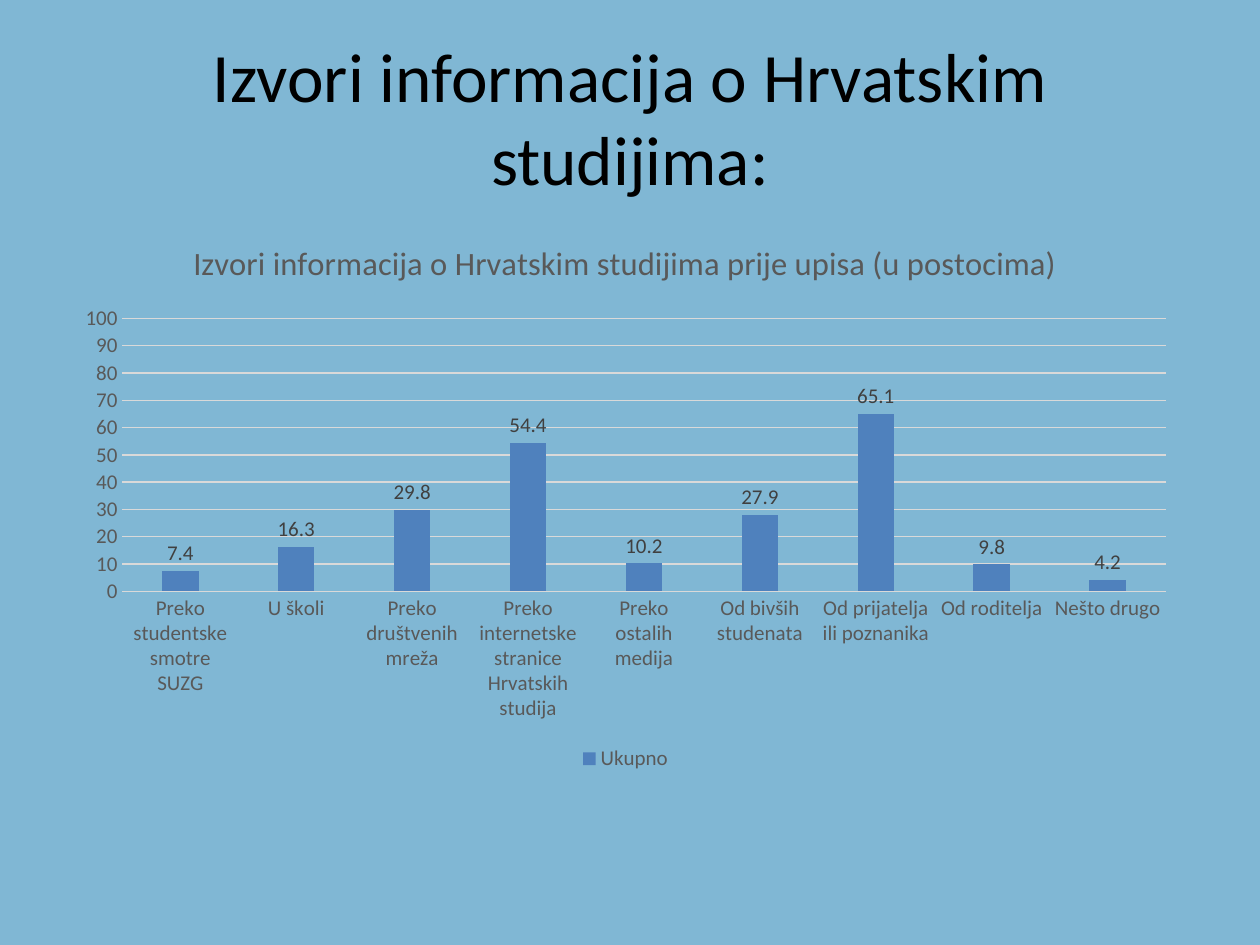
import pptx
import pptx.util
import pptx.dml.color
import pptx.chart.data
import pptx.enum.chart
import pptx.enum.text

FONT = "Calibri"
COLORS = {
    "background": "80B7D4",
    "title": "000000",
    "axis": "595959",
    "grid": "D9D9D9",
    "bar": "4F81BD",
    "value": "404040",
}
SOURCES = {
    "Preko studentske smotre SUZG": 7.4,
    "U školi": 16.3,
    "Preko društvenih mreža": 29.8,
    "Preko internetske stranice Hrvatskih studija": 54.4,
    "Preko ostalih medija": 10.2,
    "Od bivših studenata": 27.9,
    "Od prijatelja ili poznanika": 65.1,
    "Od roditelja": 9.8,
    "Nešto drugo": 4.2,
}


def rgb(name):
    """Return the named palette colour."""
    return pptx.dml.color.RGBColor.from_string(COLORS[name])


def style_font(font, size, color):
    """Set the typeface, size and colour of a font."""
    font.name = FONT
    font.size = pptx.util.Pt(size)
    font.bold = False
    font.color.rgb = rgb(color)


def style_line(line, color):
    """Give a chart line its colour and thin width."""
    line.color.rgb = rgb(color)
    line.width = pptx.util.Pt(0.75)


def place_heading(slide, box):
    """Place and fill the slide title within the box."""
    heading = slide.shapes.title
    heading.left, heading.top, heading.width, heading.height = box
    frame = heading.text_frame
    frame.word_wrap = True
    frame.auto_size = pptx.enum.text.MSO_AUTO_SIZE.NONE
    frame.vertical_anchor = pptx.enum.text.MSO_ANCHOR.MIDDLE
    paragraph = frame.paragraphs[0]
    paragraph.alignment = pptx.enum.text.PP_ALIGN.CENTER
    wording = paragraph.add_run()
    wording.text = "Izvori informacija o Hrvatskim studijima:"
    style_font(wording.font, 39.6, "title")


def format_axes(chart):
    """Format the source names and the percentage scale."""
    sources, percentages = chart.category_axis, chart.value_axis
    for axis in (sources, percentages):
        axis.major_tick_mark = pptx.enum.chart.XL_TICK_MARK.NONE
        axis.minor_tick_mark = pptx.enum.chart.XL_TICK_MARK.NONE
        style_font(axis.tick_labels.font, 12, "axis")
    style_line(sources.format.line, "grid")
    percentages.minimum_scale = 0
    percentages.maximum_scale = 100
    percentages.major_unit = 10
    percentages.format.line.fill.background()
    percentages.has_major_gridlines = True
    style_line(percentages.major_gridlines.format.line, "grid")


def format_bars(plot):
    """Format the bars and their value labels."""
    plot.gap_width = 219
    plot.overlap = -27
    plot.vary_by_categories = False
    total = plot.series[0]
    total.format.fill.solid()
    total.format.fill.fore_color.rgb = rgb("bar")
    values = total.data_labels
    values.show_value = True
    values.position = pptx.enum.chart.XL_LABEL_POSITION.OUTSIDE_END
    style_font(values.font, 12, "value")


def place_sources_chart(slide, box):
    """Place the column chart of information sources within the box."""
    figures = pptx.chart.data.CategoryChartData()
    figures.categories = list(SOURCES)
    figures.add_series("Ukupno", list(SOURCES.values()))
    chart = slide.shapes.add_chart(
        pptx.enum.chart.XL_CHART_TYPE.COLUMN_CLUSTERED, *box, figures
    ).chart
    style_font(chart.font, 10, "title")
    chart.has_title = True
    caption = chart.chart_title.text_frame.paragraphs[0].add_run()
    caption.text = "Izvori informacija o Hrvatskim studijima prije upisa (u postocima)"
    style_font(caption.font, 18.6, "axis")
    chart.chart_title.include_in_layout = False
    chart.has_legend = True
    chart.legend.position = pptx.enum.chart.XL_LEGEND_POSITION.BOTTOM
    chart.legend.include_in_layout = False
    style_font(chart.legend.font, 12, "axis")
    format_axes(chart)
    format_bars(chart.plots[0])


def main():
    """Build and save the presentation."""
    cm = pptx.util.Cm
    deck = pptx.Presentation()
    deck.slide_width, deck.slide_height = cm(25.4), cm(19.05)
    slide = deck.slides.add_slide(deck.slide_layouts[5])
    slide.background.fill.solid()
    slide.background.fill.fore_color.rgb = rgb("background")
    place_heading(slide, (cm(1.27), cm(0.76), cm(22.86), cm(3.18)))
    place_sources_chart(slide, (cm(1.27), cm(4.37), cm(22.68), cm(11.28)))
    deck.save("out.pptx")


if __name__ == "__main__":
    main()
